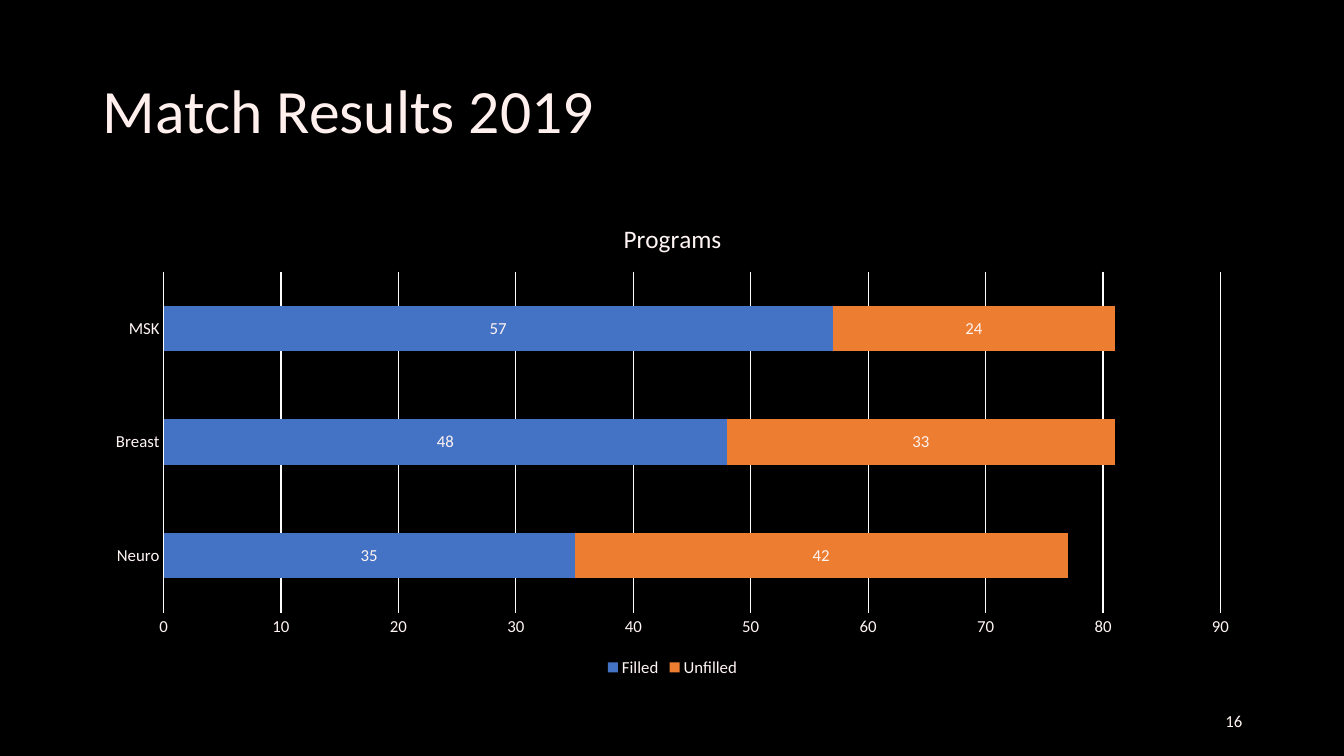
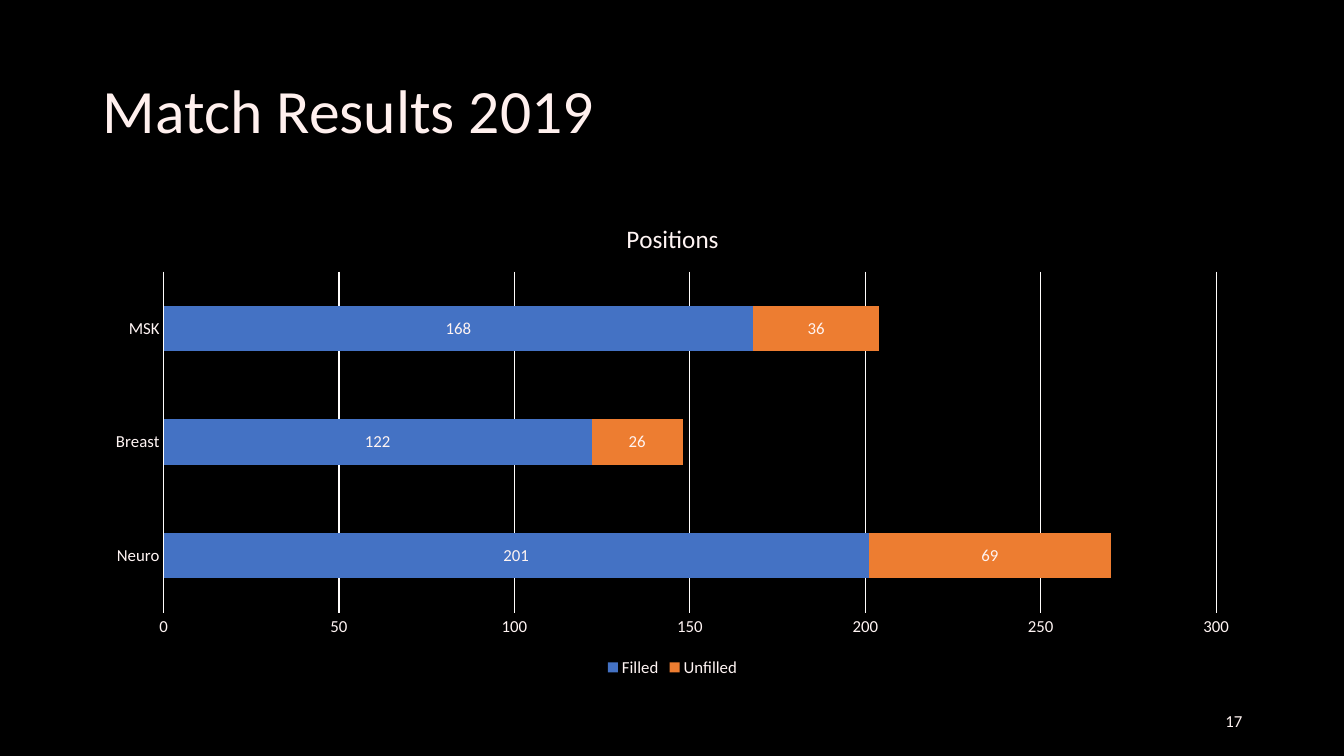
from pptx import Presentation
from pptx.chart.data import CategoryChartData
from pptx.dml.color import RGBColor
from pptx.enum.chart import (XL_CHART_TYPE, XL_LABEL_POSITION, XL_LEGEND_POSITION,
                             XL_TICK_MARK)
from pptx.enum.text import MSO_ANCHOR, MSO_AUTO_SIZE, PP_ALIGN
from pptx.util import Inches, Pt

# Shared style
WIDTH, HEIGHT = 13.33, 7.5
MARGIN = 0.92
CONTENT_WIDTH = 11.5
FONT = "Calibri"
BACKGROUND, TITLE_COLOR = "000000", "FFF0EE"
AXIS_TEXT, LABEL_TEXT, GRID_LINE = "FFF5F4", "FFF4F2", "FFFDFC"
SERIES_COLORS = {"Filled": "4472C4", "Unfilled": "ED7D31"}
SPECIALTIES = ["Neuro", "Breast", "MSK"]


def color(hex_value):
    return RGBColor.from_string(hex_value)


def style_font(font, size, hex_value):
    font.name, font.size, font.bold = FONT, Pt(size), False
    font.color.rgb = color(hex_value)


def style_line(line, hex_value):
    line.width = Pt(0.75)
    line.color.rgb = color(hex_value)


class ResultsDeck:
    """Holds the presentation, its style and the current page."""

    def __init__(self):
        self.deck = Presentation()
        self.deck.slide_width, self.deck.slide_height = Inches(WIDTH), Inches(HEIGHT)
        fill = self.deck.slide_master.background.fill
        fill.solid()
        fill.fore_color.rgb = color(BACKGROUND)
        self.page = None

    def add_page(self, title):
        self.page = self.deck.slides.add_slide(self.deck.slide_layouts[5])
        box = self.page.shapes.title
        box.left, box.top = Inches(MARGIN), Inches(0.4)
        box.width, box.height = Inches(CONTENT_WIDTH), Inches(1.45)
        self.set_text(box, title, 44, TITLE_COLOR, PP_ALIGN.LEFT, 0.9)

    def set_text(self, box, text, size, hex_value, align, spacing=1.0):
        frame = box.text_frame
        frame.text = text
        frame.word_wrap = True
        frame.auto_size = MSO_AUTO_SIZE.NONE
        frame.vertical_anchor = MSO_ANCHOR.MIDDLE
        para = frame.paragraphs[0]
        para.alignment, para.line_spacing = align, spacing
        style_font(para.font, size, hex_value)

    def add_page_number(self, number):
        width = 3
        left = MARGIN + CONTENT_WIDTH - width
        box = self.page.shapes.add_textbox(Inches(left), Inches(6.95),
                                           Inches(width), Inches(0.4))
        self.set_text(box, str(number), 12, LABEL_TEXT, PP_ALIGN.RIGHT)

    def add_stacked_bars(self, title, results, maximum, step):
        data = CategoryChartData()
        data.categories = SPECIALTIES
        for name, values in results.items():
            data.add_series(name, values)
        chart = self.page.shapes.add_chart(
            XL_CHART_TYPE.BAR_STACKED, Inches(MARGIN), Inches(2),
            Inches(CONTENT_WIDTH), Inches(4.76), data).chart
        style_font(chart.font, 10, TITLE_COLOR)

        # Title and legend
        chart.has_title = True
        chart.chart_title.include_in_layout = False
        chart.chart_title.text_frame.text = title
        style_font(chart.chart_title.text_frame.paragraphs[0].font, 18, AXIS_TEXT)
        chart.has_legend = True
        chart.legend.position = XL_LEGEND_POSITION.BOTTOM
        chart.legend.include_in_layout = False
        style_font(chart.legend.font, 12, AXIS_TEXT)

        # Axes
        for axis in (chart.category_axis, chart.value_axis):
            axis.major_tick_mark = axis.minor_tick_mark = XL_TICK_MARK.NONE
            style_font(axis.tick_labels.font, 12, AXIS_TEXT)
        style_line(chart.category_axis.format.line, GRID_LINE)
        scale = chart.value_axis
        scale.minimum_scale, scale.maximum_scale, scale.major_unit = 0, maximum, step
        scale.format.line.fill.background()
        scale.has_major_gridlines = True
        style_line(scale.major_gridlines.format.line, GRID_LINE)

        # Bars and their values
        plot = chart.plots[0]
        plot.gap_width, plot.overlap = 150, 100
        plot.vary_by_categories = False
        for series in plot.series:
            series.format.fill.solid()
            series.format.fill.fore_color.rgb = color(SERIES_COLORS[series.name])
            labels = series.data_labels
            labels.show_value = True
            labels.position = XL_LABEL_POSITION.CENTER
            style_font(labels.font, 12, LABEL_TEXT)


def main():
    charts = [
        ("Programs", {"Filled": [35, 48, 57], "Unfilled": [42, 33, 24]}, 90, 10),
        ("Positions", {"Filled": [201, 122, 168], "Unfilled": [69, 26, 36]}, 300, 50),
    ]
    results_deck = ResultsDeck()
    for number, chart in enumerate(charts, start=16):
        results_deck.add_page("Match Results 2019")
        results_deck.add_stacked_bars(*chart)
        results_deck.add_page_number(number)
    results_deck.deck.save("out.pptx")


if __name__ == "__main__":
    main()
